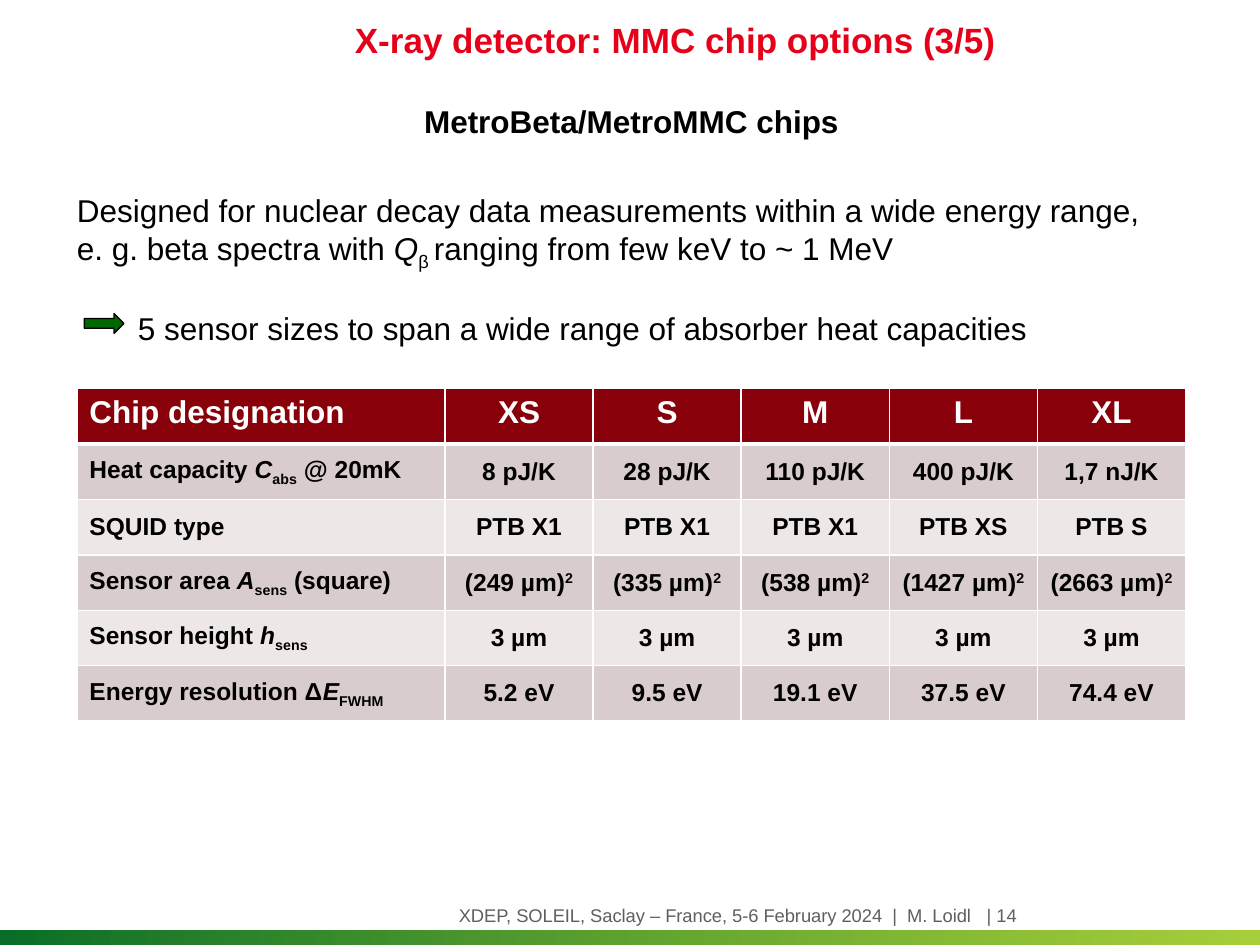
from lxml.etree import SubElement
from pptx import Presentation
from pptx.dml.color import RGBColor
from pptx.enum.shapes import MSO_SHAPE
from pptx.enum.text import MSO_ANCHOR, PP_ALIGN
from pptx.oxml import parse_xml
from pptx.oxml.ns import nsdecls, qn
from pptx.util import Cm, Pt

ITAL, SUB, SUP = {"i": "1"}, {"baseline": "-25000"}, {"baseline": "30000"}
PLAIN = {"name": "Arial", "size": Pt(18), "bold": False, "color": "000000"}
BOLD = PLAIN | {"bold": True}
TITLE = BOLD | {"size": Pt(20), "color": "E60019"}
CELL = BOLD | {"size": Pt(14)}
HEAD = BOLD | {"color": "FFFFFF"}
FOOT = PLAIN | {"size": Pt(10.5), "color": "5F5F5F"}

SIZES = ["XS", "S", "M", "L", "XL"]
AREAS = [249, 335, 538, 1427, 2663]
ROWS = [
    ["Chip designation"] + SIZES,
    [["Heat capacity ", ("C", ITAL), ("abs", SUB), " @ 20mK"],
     "8 pJ/K", "28 pJ/K", "110 pJ/K", "400 pJ/K", "1,7 nJ/K"],
    ["SQUID type", "PTB X1", "PTB X1", "PTB X1", "PTB XS", "PTB S"],
    [["Sensor area ", ("A", ITAL), ("sens", SUB), " (square)"]]
    + [[f"({a} µm)", ("2", SUP)] for a in AREAS],
    [["Sensor height ", ("h", ITAL), ("sens", SUB)]] + ["3 µm"] * 5,
    [["Energy resolution Δ", ("E", ITAL), ("FWHM", SUB)],
     "5.2 eV", "9.5 eV", "19.1 eV", "37.5 eV", "74.4 eV"],
]


def rgb(code):
    return RGBColor.from_string(code)


def place(box):
    return [Cm(v) for v in box]


def write(para, parts, fmt, align=PP_ALIGN.LEFT):
    """Fill a paragraph with plain strings and (text, run marks) pairs."""
    para.alignment = align
    for part in [parts] if isinstance(parts, str) else parts:
        text, marks = (part, {}) if isinstance(part, str) else part
        run = para.add_run()
        run.text = text
        for key, val in fmt.items():
            if key == "color":
                run.font.color.rgb = rgb(val)
            else:
                setattr(run.font, key, val)
        for key, val in marks.items():
            run.font._element.set(key, val)


def add_text(slide, box, lines, fmt, inset=True):
    frame = slide.shapes.add_textbox(*place(box)).text_frame
    frame.word_wrap = True
    if not inset:
        frame.vertical_anchor = MSO_ANCHOR.MIDDLE
        for side in ("left", "top", "right", "bottom"):
            setattr(frame, f"margin_{side}", 0)
    for num, line in enumerate(lines):
        para = frame.add_paragraph() if num else frame.paragraphs[0]
        write(para, line, fmt)
    return frame


def add_title(slide, box):
    title = slide.shapes.title
    title.left, title.top, title.width, title.height = place(box)
    frame = title.text_frame
    frame.word_wrap = True
    frame.vertical_anchor = MSO_ANCHOR.TOP
    write(frame.paragraphs[0], "X-ray detector: MMC chip options (3/5)", TITLE)


def add_intro(slide, box):
    left, top, width, height = box
    frame = add_text(slide, box, [
        "Designed for nuclear decay data measurements within a wide energy range,",
        ["e. g. beta spectra with ", ("Q", ITAL), ("β ", SUB),
         "ranging from few keV to ~ 1 MeV"],
        "5 sensor sizes to span a wide range of absorber heat capacities",
    ], PLAIN)
    last = frame.paragraphs[-1]
    last.space_before = Pt(21)
    last._p.get_or_add_pPr().set("marL", str(Cm(1.23)))

    # Arrow in front of the conclusion
    arrow = slide.shapes.add_shape(
        MSO_SHAPE.RIGHT_ARROW, *place((left + 0.4, top + 2.59, 0.8, 0.4)))
    arrow.shadow.inherit = False
    arrow.fill.solid()
    arrow.fill.fore_color.rgb = rgb("006600")
    arrow.line.color.rgb = rgb("000000")
    arrow.line.width = Pt(0.75)


def add_edges(cell, top, base):
    props = cell._tc.get_or_add_tcPr()
    for num, (side, wide) in enumerate(zip("LRTB", (1, 1, top, base))):
        props.insert(num, parse_xml(
            f'<a:ln{side} {nsdecls("a")} w="{Pt(wide)}"><a:solidFill>'
            f'<a:srgbClr val="FFFFFF"/></a:solidFill></a:ln{side}>'))


def add_chips(slide, box):
    width = box[2]
    first = 7.42
    table = slide.shapes.add_table(len(ROWS), len(ROWS[0]), *place(box)).table
    for num, col in enumerate(table.columns):
        col.width = Cm((width - first) / len(SIZES) if num else first)
    for r, row in enumerate(ROWS):
        table.rows[r].height = Cm(box[3] / len(ROWS))
        tint = ("D9CCCC" if r % 2 else "EDE7E7") if r else "87000A"
        for c, parts in enumerate(row):
            cell = table.cell(r, c)
            cell.fill.solid()
            cell.fill.fore_color.rgb = rgb(tint)
            cell.vertical_anchor = MSO_ANCHOR.MIDDLE if r else MSO_ANCHOR.TOP
            write(cell.text_frame.paragraphs[0], parts, CELL if r else HEAD,
                  PP_ALIGN.CENTER if c else PP_ALIGN.LEFT)
            add_edges(cell, 3 if r == 1 else 1, 1 if r else 3)


def add_footer(slide, box):
    left, top, width, height = box
    # Gradient strip along the lower edge
    strip = slide.shapes.add_shape(
        MSO_SHAPE.RECTANGLE, *place((left, top + height - 0.3, width, 0.3)))
    strip.shadow.inherit = False
    strip.line.fill.background()
    strip.fill.gradient()
    strip.fill.gradient_angle = 0
    for stop, code, spot in zip(strip.fill.gradient_stops,
                                ("0A6E28", "91C30A"), (0, 1)):
        stop.color.rgb = rgb(code)
        stop.position = spot
    tone = list(strip._element.spPr.iter(qn("a:srgbClr")))[-1]
    SubElement(tone, qn("a:alpha")).set("val", "80000")

    # Event and page number
    add_text(slide, (left + 9.25, top, 10.6, 0.46),
             ["XDEP, SOLEIL, Saclay – France, 5-6 February 2024  |  M. Loidl"],
             FOOT, False)
    add_text(slide, (left + 19.89, top, 2.39, 0.46), ["| 14"], FOOT, False)


def main():
    deck = Presentation()
    deck.slide_width, deck.slide_height = Cm(25.4), Cm(19.05)
    slide = deck.slides.add_slide(deck.slide_layouts[5])
    add_title(slide, (6.9, 0.25, 13.9, 1.12))
    add_text(slide, (8.3, 1.93, 9.4, 1.02), ["MetroBeta/MetroMMC chips"], BOLD)
    add_intro(slide, (1.3, 3.73, 22.6, 3.33))
    add_chips(slide, (1.55, 7.83, 22.35, 6.71))
    add_footer(slide, (0, 18.21, 25.4, 0.84))
    deck.save("out.pptx")


if __name__ == "__main__":
    main()
